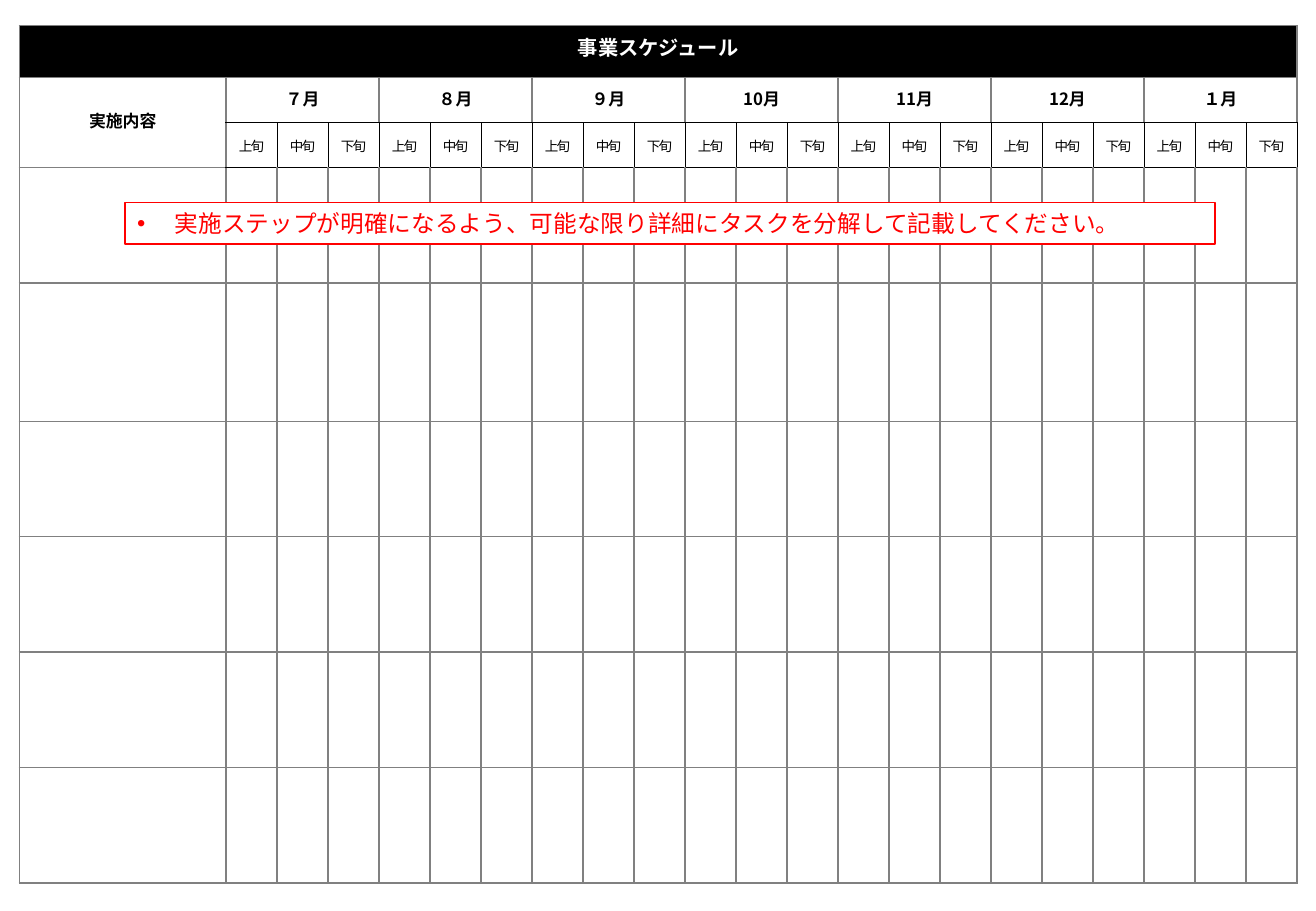
import pptx
import pptx.util
import pptx.dml.color
import pptx.enum.shapes
import pptx.enum.text
import pptx.oxml.ns
from lxml import etree

# Content
TITLE = "事業スケジュール"
TASK_HEADING = "実施内容"
MONTHS = ["７月", "８月", "９月", "10月", "11月", "12月", "１月"]
PERIODS = ["上旬", "中旬", "下旬"]
NOTE = "実施ステップが明確になるよう、可能な限り詳細にタスクを分解して記載してください。"

# Layout in inches
SLIDE_WIDTH, SLIDE_HEIGHT = 10.83, 7.5
TABLE_LEFT, TABLE_TOP = 0.16, 0.21
TASK_WIDTH, PERIOD_WIDTH = 1.7, 0.42
ROW_HEIGHTS = [0.43, 0.37, 0.37, 0.95, 1.14] + [0.95] * 4
NOTE_BOX = (1.03, 1.67, 8.97, 0.34)
NOTE_INDENT = 0.31

FONT = "Noto Sans CJK JP"
BLACK, WHITE, GREY, RED = "000000", "FFFFFF", "808080", "FF0000"
GREY_LINE, BLACK_LINE = (GREY, 1), (BLACK, 0.5)

qn = pptx.oxml.ns.qn
inches = pptx.util.Inches
points = pptx.util.Pt


def color(hex_text):
    return pptx.dml.color.RGBColor.from_string(hex_text)


def format_font(para, size, hex_text, bold=False, spacing=None):
    para.font.size = points(size)
    para.font.bold = bold
    para.font.color.rgb = color(hex_text)
    para.font.name = FONT
    props = para._p.get_or_add_pPr().find(qn("a:defRPr"))
    etree.SubElement(props, qn("a:ea"), typeface=FONT)
    if spacing is not None:
        props.set("spc", str(int(spacing * 100)))


def set_borders(cell, lines):
    props = cell._tc.get_or_add_tcPr()
    for side, (hex_text, width) in zip("LRTB", lines):
        line = etree.SubElement(props, qn("a:ln" + side), w=str(points(width)))
        fill = etree.SubElement(line, qn("a:solidFill"))
        etree.SubElement(fill, qn("a:srgbClr"), val=hex_text)


def border_lines(row, column):
    """Left, right, top and bottom lines of a cell."""
    if column > 0 and row == 2:
        return [BLACK_LINE] * 4
    top = BLACK_LINE if column > 0 and row == 3 else GREY_LINE
    bottom = BLACK_LINE if column > 0 and row == 1 else GREY_LINE
    return [GREY_LINE, GREY_LINE, top, bottom]


def add_schedule(page):
    span = len(PERIODS)
    widths = [TASK_WIDTH] + [PERIOD_WIDTH] * (len(MONTHS) * span)
    frame = page.shapes.add_table(
        len(ROW_HEIGHTS), len(widths), inches(TABLE_LEFT), inches(TABLE_TOP),
        inches(sum(widths)), inches(sum(ROW_HEIGHTS)))
    table = frame.table
    table.first_row = table.horz_banding = False
    for column, width in zip(table.columns, widths):
        column.width = inches(width)
    for row, height in zip(table.rows, ROW_HEIGHTS):
        row.height = inches(height)

    # Headings
    table.cell(0, 0).merge(table.cell(0, len(widths) - 1))
    table.cell(1, 0).merge(table.cell(2, 0))
    table.cell(0, 0).text = TITLE
    table.cell(1, 0).text = TASK_HEADING
    for index, month in enumerate(MONTHS):
        first = 1 + index * span
        table.cell(1, first).merge(table.cell(1, first + span - 1))
        table.cell(1, first).text = month
        for offset, period in enumerate(PERIODS):
            table.cell(2, first + offset).text = period

    # Cell format
    for row in range(len(ROW_HEIGHTS)):
        for column in range(len(widths)):
            cell = table.cell(row, column)
            set_borders(cell, border_lines(row, column))
            cell.vertical_anchor = pptx.enum.text.MSO_ANCHOR.MIDDLE
            para = cell.text_frame.paragraphs[0]
            para.alignment = pptx.enum.text.PP_ALIGN.CENTER
            para.line_spacing = points(12)
            if row == 0:
                cell.fill.solid()
                cell.fill.fore_color.rgb = color(BLACK)
                format_font(para, 12, WHITE, bold=True)
            else:
                cell.fill.background()
                if row == 1:
                    format_font(para, 10, BLACK, bold=True)
                else:
                    format_font(para, 8, BLACK, spacing=-1)


def add_note(page):
    box = page.shapes.add_shape(
        pptx.enum.shapes.MSO_SHAPE.RECTANGLE, *map(inches, NOTE_BOX))
    box.shadow.inherit = False
    box.fill.solid()
    box.fill.fore_color.rgb = color(WHITE)
    box.line.color.rgb = color(RED)
    box.line.width = points(0.75)
    frame = box.text_frame
    frame.word_wrap = True
    frame.auto_size = pptx.enum.text.MSO_AUTO_SIZE.SHAPE_TO_FIT_TEXT
    frame.vertical_anchor = pptx.enum.text.MSO_ANCHOR.TOP
    para = frame.paragraphs[0]
    para.text = NOTE
    para.alignment = pptx.enum.text.PP_ALIGN.LEFT
    props = para._p.get_or_add_pPr()
    props.set("marL", str(inches(NOTE_INDENT)))
    props.set("indent", str(-inches(NOTE_INDENT)))
    etree.SubElement(props, qn("a:buFont"), typeface="Arial")
    etree.SubElement(props, qn("a:buChar"), char="•")
    format_font(para, 14, RED)


def main():
    deck = pptx.Presentation()
    deck.slide_width = inches(SLIDE_WIDTH)
    deck.slide_height = inches(SLIDE_HEIGHT)
    page = deck.slides.add_slide(deck.slide_layouts[6])
    add_schedule(page)
    add_note(page)
    deck.save("out.pptx")


if __name__ == "__main__":
    main()
